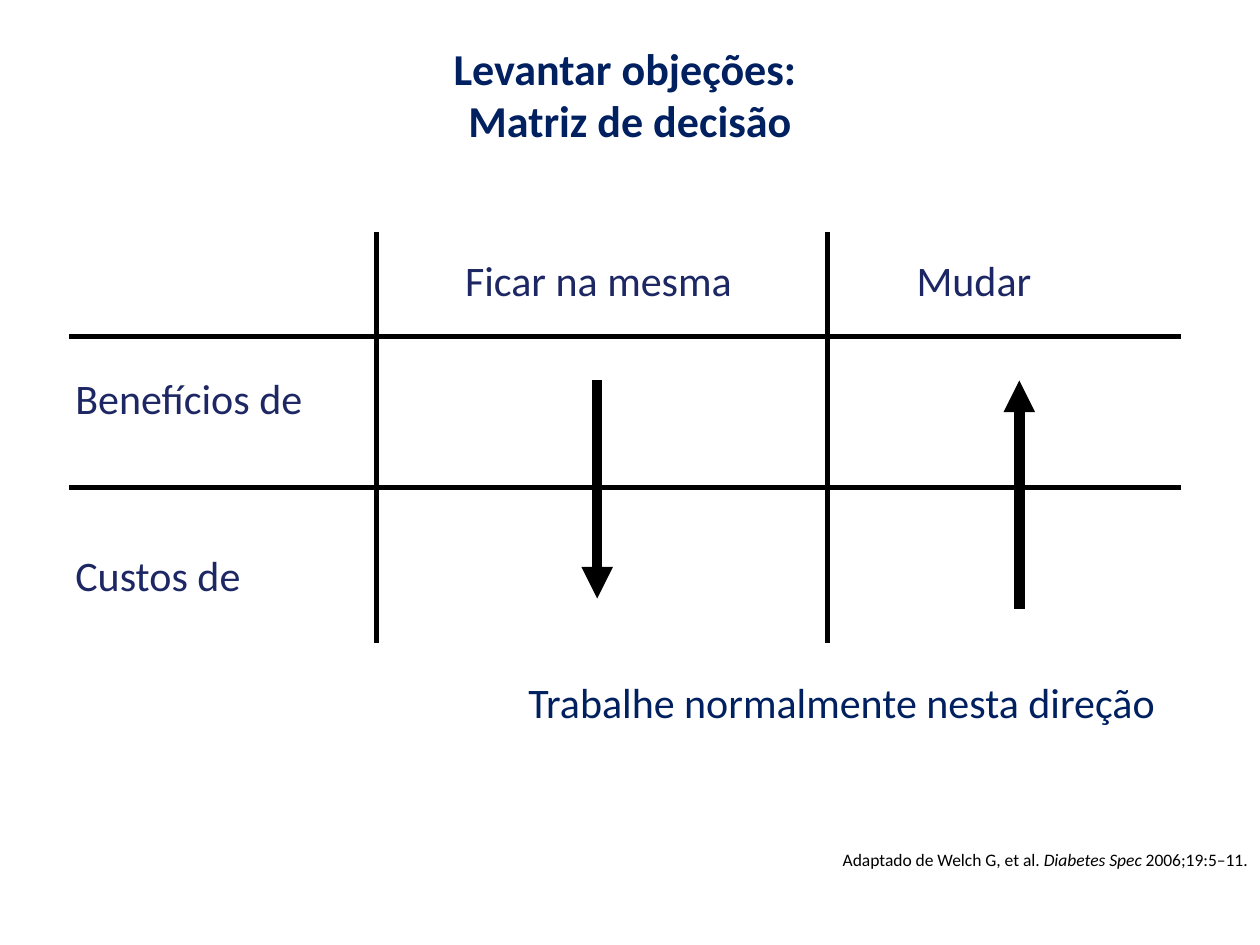
from lxml import etree
from pptx import Presentation
from pptx.dml.color import RGBColor
from pptx.enum.shapes import MSO_CONNECTOR
from pptx.enum.text import MSO_ANCHOR, PP_ALIGN
from pptx.oxml.ns import qn
from pptx.util import Inches, Pt

NAVY = RGBColor(0x00, 0x20, 0x60)
INDIGO = RGBColor(0x1D, 0x27, 0x63)
BLACK = RGBColor(0, 0, 0)


def write_text(shape, *runs, size=24, color=INDIGO, bold=False,
               align=PP_ALIGN.LEFT, anchor=MSO_ANCHOR.MIDDLE, font="Calibri"):
    """Fill a shape with one paragraph; each run is a (text, italic) pair."""
    frame = shape.text_frame
    frame.word_wrap = True
    frame.vertical_anchor = anchor
    paragraph = frame.paragraphs[0]
    paragraph.alignment = align
    for text, italic in runs:
        run = paragraph.add_run()
        run.text = text
        run.font.name = font
        run.font.size = Pt(size)
        run.font.bold = bold
        run.font.italic = italic
        run.font.color.rgb = color


class MatrixSlide:
    def __init__(self, presentation, line_color=BLACK):
        self.slide = presentation.slides.add_slide(presentation.slide_layouts[5])
        self.line_color = line_color

    def title(self, lines, left, top, width, height):
        shape = self.slide.shapes.title
        shape.left, shape.top = Inches(left), Inches(top)
        shape.width, shape.height = Inches(width), Inches(height)
        paragraph = shape.text_frame.paragraphs[0]
        write_text(shape, (lines[0], False), size=25.2, color=NAVY, bold=True,
                   align=PP_ALIGN.CENTER)
        paragraph.add_line_break()
        write_text(shape, (lines[1], False), size=25.2, color=NAVY, bold=True,
                   align=PP_ALIGN.CENTER)

    def text(self, runs, left, top, width, height, **text_format):
        box = self.slide.shapes.add_textbox(
            Inches(left), Inches(top), Inches(width), Inches(height))
        write_text(box, *runs, **text_format)

    def line(self, start, end, width=2.75, arrow=False):
        connector = self.slide.shapes.add_connector(
            MSO_CONNECTOR.STRAIGHT, *map(Inches, start + end))
        connector.line.color.rgb = self.line_color
        connector.line.width = Pt(width)
        if arrow:
            outline = connector.line._get_or_add_ln()
            etree.SubElement(outline, qn("a:tailEnd"), type="triangle")
        etree.SubElement(connector._element.spPr, qn("a:effectLst"))


def main():
    presentation = Presentation()
    presentation.slide_width, presentation.slide_height = Inches(10), Inches(7.5)
    matrix = MatrixSlide(presentation)
    matrix.title(("Levantar objeções: ", "Matriz de decisão"), 0.5, 0.32, 9, 0.85)

    label_height = 0.5
    for label, center in (("Ficar na mesma", 4.75), ("Mudar", 7.73)):
        matrix.text([(label, False)], center - 1.25, 1.97, 2.5, label_height,
                    align=PP_ALIGN.CENTER)
    for label, top in (("Benefícios de", 2.91), ("Custos de", 4.31)):
        matrix.text([(label, False)], 0.5, top, 2.4, label_height)

    for x in (2.99, 6.57):
        matrix.line((x, 1.84), (x, 5.1))
    for y in (2.67, 3.87):
        matrix.line((0.55, y), (9.37, y))
    matrix.line((4.74, 3.02), (4.74, 4.75), width=6, arrow=True)
    matrix.line((8.09, 4.83), (8.09, 3.02), width=6, arrow=True)

    matrix.text([("Trabalhe normalmente nesta direção", False)],
                3.84, 5.32, 5.68, label_height, color=NAVY, align=PP_ALIGN.CENTER)
    matrix.text([("Adaptado de Welch G, et al. ", False), ("Diabetes Spec", True),
                 (" 2006;19:5–11.", False)],
                5.34, 6.69, 4.66, 0.27, size=10, color=BLACK, align=PP_ALIGN.RIGHT)
    presentation.save("out.pptx")


if __name__ == "__main__":
    main()
